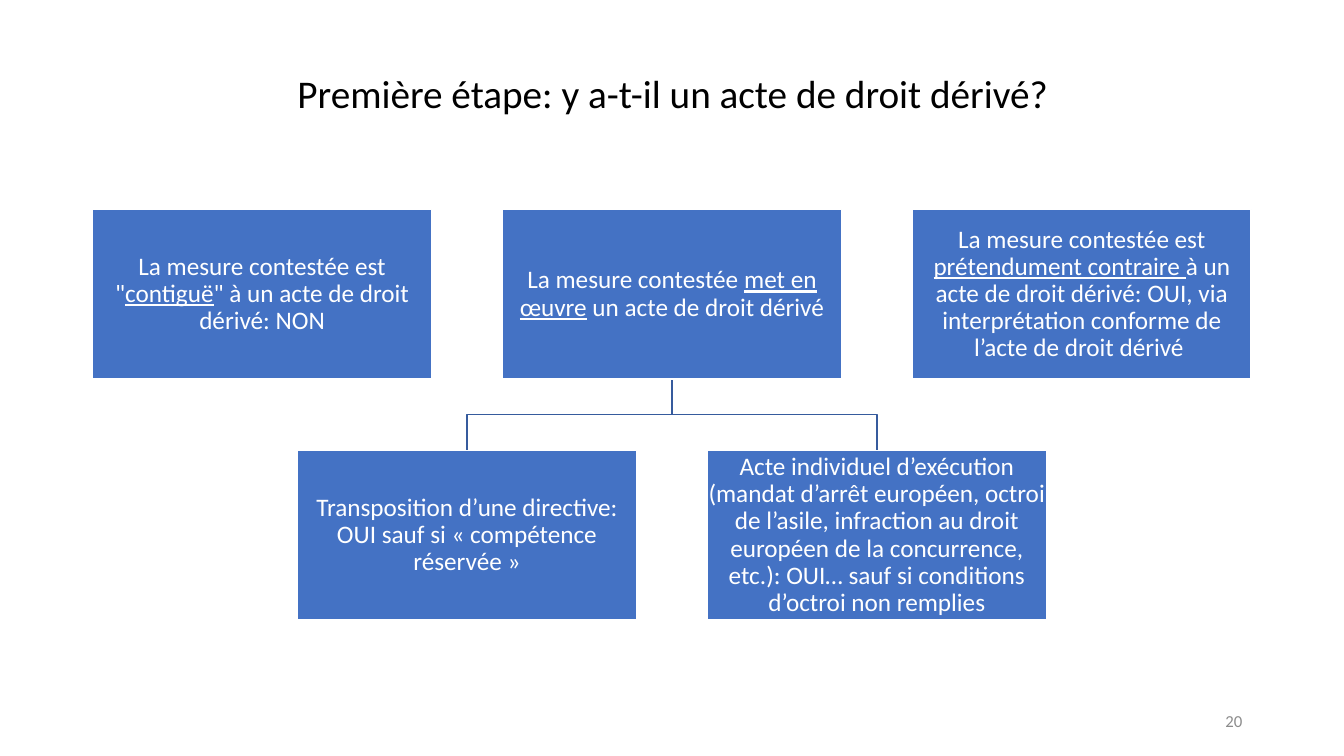
import pptx
import pptx.util
import pptx.dml.color
import pptx.enum.shapes
import pptx.enum.text

Inches = pptx.util.Inches
Pt = pptx.util.Pt
ALIGN = pptx.enum.text.PP_ALIGN
MIDDLE = pptx.enum.text.MSO_ANCHOR.MIDDLE


def color(value):
    return pptx.dml.color.RGBColor.from_string(value)


def write(tf, runs, size, hex_color, align, inset=None):
    tf.word_wrap = True
    tf.vertical_anchor = MIDDLE
    if inset is not None:
        for side in ("left", "right", "top", "bottom"):
            setattr(tf, f"margin_{side}", Inches(inset))
    p = tf.paragraphs[0]
    p.alignment = align
    for i, text in enumerate(runs):
        r = p.add_run()
        r.text = text
        for name, value in {"name": "Calibri", "size": Pt(size), "underline": i % 2 == 1}.items():
            setattr(r.font, name, value)
        r.font.color.rgb = color(hex_color)
    return p


prs = pptx.Presentation()
prs.slide_width = Inches(13.33)
prs.slide_height = Inches(7.5)
s = prs.slides.add_slide(prs.slide_layouts[5])

title = s.shapes.title
title.left, title.top, title.width, title.height = map(Inches, (0.92, 0.64, 11.5, 0.57))
write(title.text_frame, ["Première étape: y a-t-il un acte de droit dérivé?"], 28, "000000", ALIGN.CENTER)

left, box_w, box_h = 0.92, 3.36, 1.68
half_step = (9.05 - left) / 4
top_row, bottom_row = 2.08, 4.47

fork_x = left + 2 * half_step + box_w / 2
fork_top = top_row + box_h
fork_mid = (fork_top + bottom_row) / 2
for direction in (1, -1):
    branch_x = fork_x + direction * half_step
    builder = s.shapes.build_freeform(Inches(fork_x), Inches(fork_top))
    builder.add_line_segments(
        [(Inches(x), Inches(y)) for x, y in
         ((fork_x, fork_mid), (branch_x, fork_mid), (branch_x, bottom_row))],
        close=False,
    )
    sp = builder.convert_to_shape()
    sp.shadow.inherit = False
    sp.fill.background()
    sp.line.color.rgb = color("365B9D")
    sp.line.width = Pt(1)

boxes = [
    (0, top_row, ["La mesure contestée est \"", "contiguë", "\" à un acte de droit dérivé: NON"]),
    (2, top_row, ["La mesure contestée ", "met en œuvre", " un acte de droit dérivé"]),
    (4, top_row, ["La mesure contestée est ", "prétendument contraire ",
                  "à un acte de droit dérivé: OUI, via interprétation conforme de l’acte de droit dérivé "]),
    (1, bottom_row, ["Transposition d’une directive: OUI sauf si « compétence réservée »"]),
    (3, bottom_row, ["Acte individuel d’exécution (mandat d’arrêt européen, octroi de l’asile, "
                     "infraction au droit européen de la concurrence, etc.): OUI… sauf si "
                     "conditions d’octroi non remplies"]),
]
for column, top, runs in boxes:
    sp = s.shapes.add_shape(
        pptx.enum.shapes.MSO_SHAPE.RECTANGLE,
        Inches(left + column * half_step), Inches(top), Inches(box_w), Inches(box_h),
    )
    sp.shadow.inherit = False
    sp.fill.solid()
    sp.fill.fore_color.rgb = color("4472C4")
    sp.line.color.rgb = color("FFFFFF")
    sp.line.width = Pt(1)
    p = write(sp.text_frame, runs, 18, "FFFFFF", ALIGN.CENTER, 0.01)
    p.line_spacing = 0.9

number = s.shapes.add_textbox(Inches(9.42), Inches(6.95), Inches(3), Inches(0.4))
write(number.text_frame, ["20"], 12, "8C8C8C", ALIGN.RIGHT)

prs.save("out.pptx")
